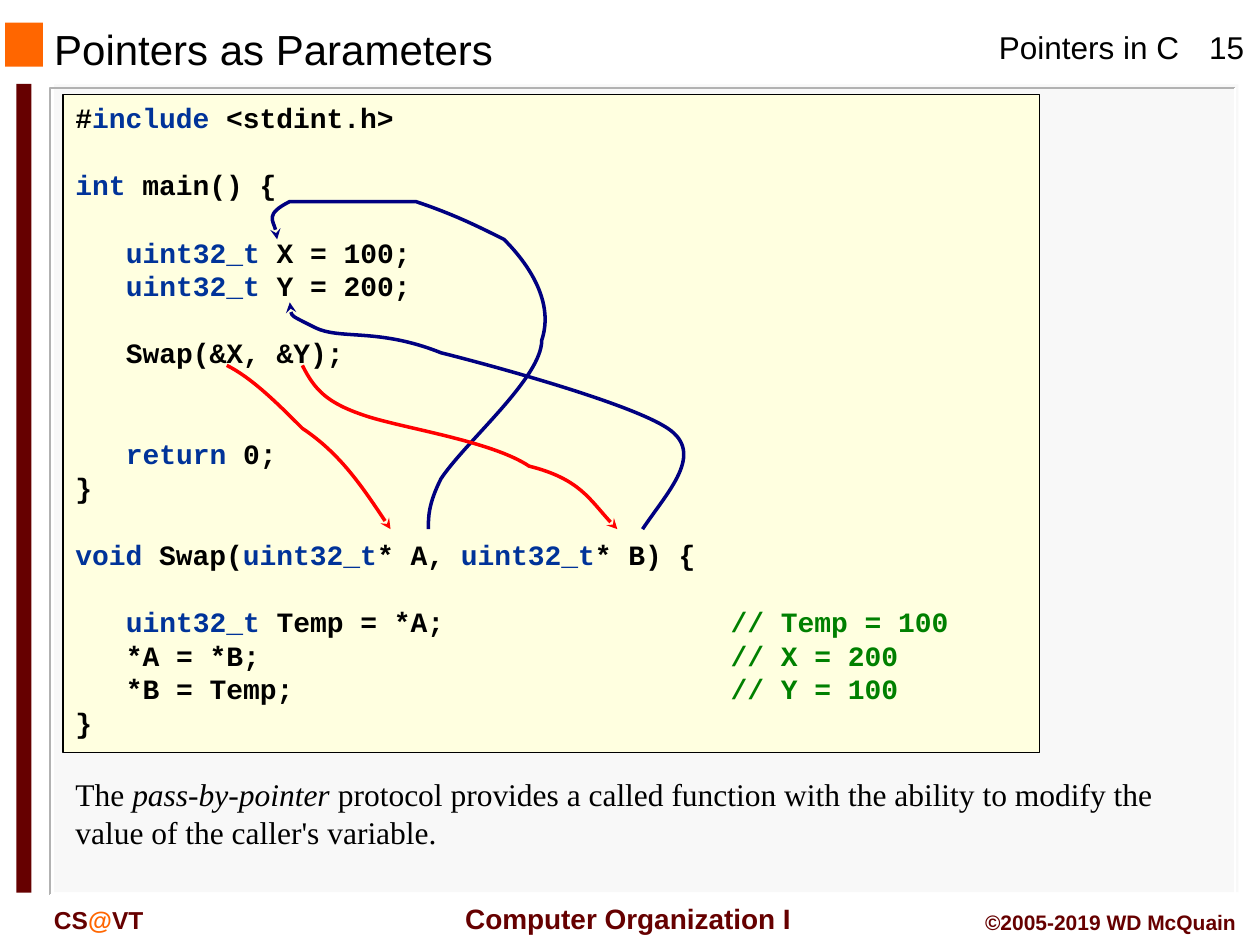
"""Build the "Pointers as Parameters" slide on a grid of 100 columns by 75 rows."""
from lxml import etree
from pptx import Presentation
from pptx import util as u
from pptx.dml.color import RGBColor
from pptx.enum import shapes, text
from pptx.oxml.ns import qn

C = {"black": "000000", "panel": "F8F8F8", "edge": "B2B2B2", "white": "FFFFFF",
     "orange": "FF6600", "maroon": "660000", "code": "FFFFE0", "keyword": "003399",
     "comment": "008000", "navy": "000080", "red": "FF0000"}
COLS, ROWS = 100, 75
CELL = u.Inches(10) // COLS
LINE_PT = 19.2
TAB_CHARS = (3, 39)
CHAR_PT = 9.6

# Each line: blank lines above it, then its text; backticks enclose keywords.
CODE = [
    (0, "#`include` <stdint.h>"),
    (1, "`int` main() {"),
    (1, "\t`uint32_t` X = 100;"),
    (0, "\t`uint32_t` Y = 200;"),
    (1, "\tSwap(&X, &Y);"),
    (2, "\t`return` 0;"),
    (0, "}"),
    (1, "`void` Swap(`uint32_t`* A, `uint32_t`* B) {"),
    (1, "\t`uint32_t` Temp = *A;\t// Temp = 100"),
    (0, "\t*A = *B;\t// X = 200"),
    (0, "\t*B = Temp;\t// Y = 100"),
    (0, "}"),
]
ARROWS = [
    ("navy", [(33.5, 42.1), (33.5, 41.1), (33.6, 40.1), (35.2, 37.6), (36.9, 35.1),
              (42.6, 30.2), (43.3, 27.1), (44.1, 24.1), (41.6, 21.1), (39.8, 19.4),
              (38.1, 17.6), (35.5, 17), (32.7, 16.5), (29.9, 16), (24.8, 16),
              (23, 16.3), (21.3, 16.7), (21.7, 17.7), (22.2, 18.7)]),
    ("navy", [(50.6, 42.1), (53.1, 39.3), (55.5, 36.5), (52.9, 34.1), (50.2, 31.7),
              (39.2, 29.1), (34.6, 27.8), (30, 26.4), (27.1, 26.7), (25.2, 26),
              (23.4, 25.4), (23.3, 24.6), (23.3, 23.8)]),
    ("red", [(17.8, 29.1), (20, 30.5), (22.2, 31.9), (24.4, 34.1), (26.7, 36.3),
             (28.9, 39.4), (31.1, 42.4)]),
    ("red", [(23.9, 29.4), (25, 30.7), (26, 31.9), (29.1, 33.1), (32.1, 34.4),
             (38.9, 35.3), (42.2, 36.9), (45.5, 38.4), (47.2, 40.4), (48.9, 42.4)]),
]


def grid(*cells):
    """Turn grid cells into lengths."""
    return [u.Emu(round(n * CELL)) for n in cells]


def rgb(name):
    """Look up a colour."""
    return RGBColor.from_string(C[name])


def write(p, words, font="Arial", size=18, color="black", bold=False, italic=False):
    """Add one formatted run to a paragraph."""
    r = p.add_run()
    r.text = words
    f = r.font
    f.name, f.size, f.bold, f.italic = font, u.Pt(size), bold, italic
    f.color.rgb = rgb(color)


def label(s, at, runs, align="LEFT", wrap=True, **fmt):
    """Add a text box holding one paragraph of (text, overrides) runs."""
    tf = s.shapes.add_textbox(*grid(*at)).text_frame
    tf.word_wrap = wrap
    p = tf.paragraphs[0]
    p.alignment = getattr(text.PP_ALIGN, align)
    for words, extra in runs:
        write(p, words, **{**fmt, **extra})


def rect(s, at, fill, line=None):
    """Add a plain rectangle."""
    sp = s.shapes.add_shape(shapes.MSO_SHAPE.RECTANGLE, *grid(*at))
    sp.shadow.inherit = False
    sp.fill.solid()
    sp.fill.fore_color.rgb = rgb(fill)
    if line:
        sp.line.color.rgb, sp.line.width = rgb(line), u.Pt(0.75)
    else:
        sp.line.fill.background()
    return sp


def outline(s, points, color, width):
    """Add an open, unfilled path through the points."""
    fb = s.shapes.build_freeform(*points[0], scale=CELL)
    fb.add_line_segments(points[1:], close=False)
    sp = fb.convert_to_shape()
    sp.shadow.inherit = False
    sp.fill.background()
    sp.line.color.rgb, sp.line.width = rgb(color), u.Pt(width)
    return sp


def curved_arrow(s, points, color):
    """Add a cubic curve that ends in a stealth arrowhead."""
    sp = outline(s, points, color, 2)
    path = next(sp.element.iter(qn("a:path")))
    segments = path.findall(qn("a:lnTo"))
    for i in range(0, len(segments), 3):
        curve = etree.SubElement(path, qn("a:cubicBezTo"))
        for segment in segments[i:i + 3]:
            curve.append(segment[0])
            path.remove(segment)
    etree.SubElement(sp.line._get_or_add_ln(), qn("a:tailEnd"), type="stealth")


def code_line(p, blanks, line):
    """Write one line of code with its keywords and comment coloured."""
    p.alignment = text.PP_ALIGN.LEFT
    p.space_before = u.Pt(blanks * LINE_PT)
    tabs = etree.SubElement(p._p.get_or_add_pPr(), qn("a:tabLst"))
    for chars in TAB_CHARS:
        etree.SubElement(tabs, qn("a:tab"), pos=str(u.Pt(chars * CHAR_PT)), algn="l")
    body, mark, note = line.partition("//")
    parts = [(t, "keyword" if i % 2 else "black") for i, t in enumerate(body.split("`"))]
    for words, color in parts + [(mark + note, "comment")]:
        if words:
            write(p, words, "Courier New", 16, color, bold=True)


def code_box(s, at, lines):
    """Add the framed code listing."""
    tf = rect(s, at, "code", "black").text_frame
    tf.word_wrap, tf.vertical_anchor = True, text.MSO_ANCHOR.TOP
    for i, (blanks, line) in enumerate(lines):
        code_line(tf.add_paragraph() if i else tf.paragraphs[0], blanks, line)


def title(s, at, words):
    """Place and format the title placeholder."""
    sp = s.shapes.title
    sp.left, sp.top, sp.width, sp.height = grid(*at)
    tf = sp.text_frame
    tf.auto_size, tf.vertical_anchor = text.MSO_AUTO_SIZE.NONE, text.MSO_ANCHOR.MIDDLE
    tf.paragraphs[0].alignment = text.PP_ALIGN.LEFT
    write(tf.paragraphs[0], words, size=24)


def frame(s):
    """Add the panel, bars, header and footer."""
    rect(s, (4.3, 6.7, 94, 64.1), "panel")
    outline(s, [(98.1, 6.7), (4.2, 6.7), (4.2, 70.8)], "edge", 1)
    outline(s, [(98.3, 6.7), (98.3, 70.8), (4.4, 70.8)], "white", 1)
    rect(s, (0.4, 1.8, 3, 3.5), "orange")
    rect(s, (1.3, 6.65, 1.2, 64.2), "maroon")
    label(s, (78.3, 1.7, 16.5, 4), [("Pointers in C", {})], wrap=False)
    label(s, (94, 1.7, 6.7, 4), [("15", {})], "CENTER")
    footer = {"color": "maroon", "bold": True}
    label(s, (3.3, 71.3, 15, 3.3), [("CS", {}), ("@", {"color": "orange"}), ("VT", {})],
          size=14, **footer)
    label(s, (35.3, 71.1, 29.1, 3.7), [("Computer Organization I", {})], "CENTER",
          False, size=16, **footer)
    label(s, (75.8, 71.7, 23.3, 3), [("©2005-2019 WD McQuain", {})], "RIGHT",
          size=12, **footer)


def main():
    """Build and save the slide."""
    prs = Presentation()
    prs.slide_width, prs.slide_height = grid(COLS, ROWS)
    s = prs.slides.add_slide(prs.slide_layouts[5])
    frame(s)
    title(s, (3.3, 2, 63.3, 3.8), "Pointers as Parameters")
    code_box(s, (5, 7.5, 77.5, 52.2), CODE)
    label(s, (5, 61, 92.5, 7.1),
          [("The ", {}), ("pass-by-pointer", {"italic": True}),
           (" protocol provides a called function with the ability to modify the "
            "value of the caller's variable.", {})], font="Times New Roman")
    for color, points in ARROWS:
        curved_arrow(s, points, color)
    prs.save("out.pptx")


if __name__ == "__main__":
    main()
